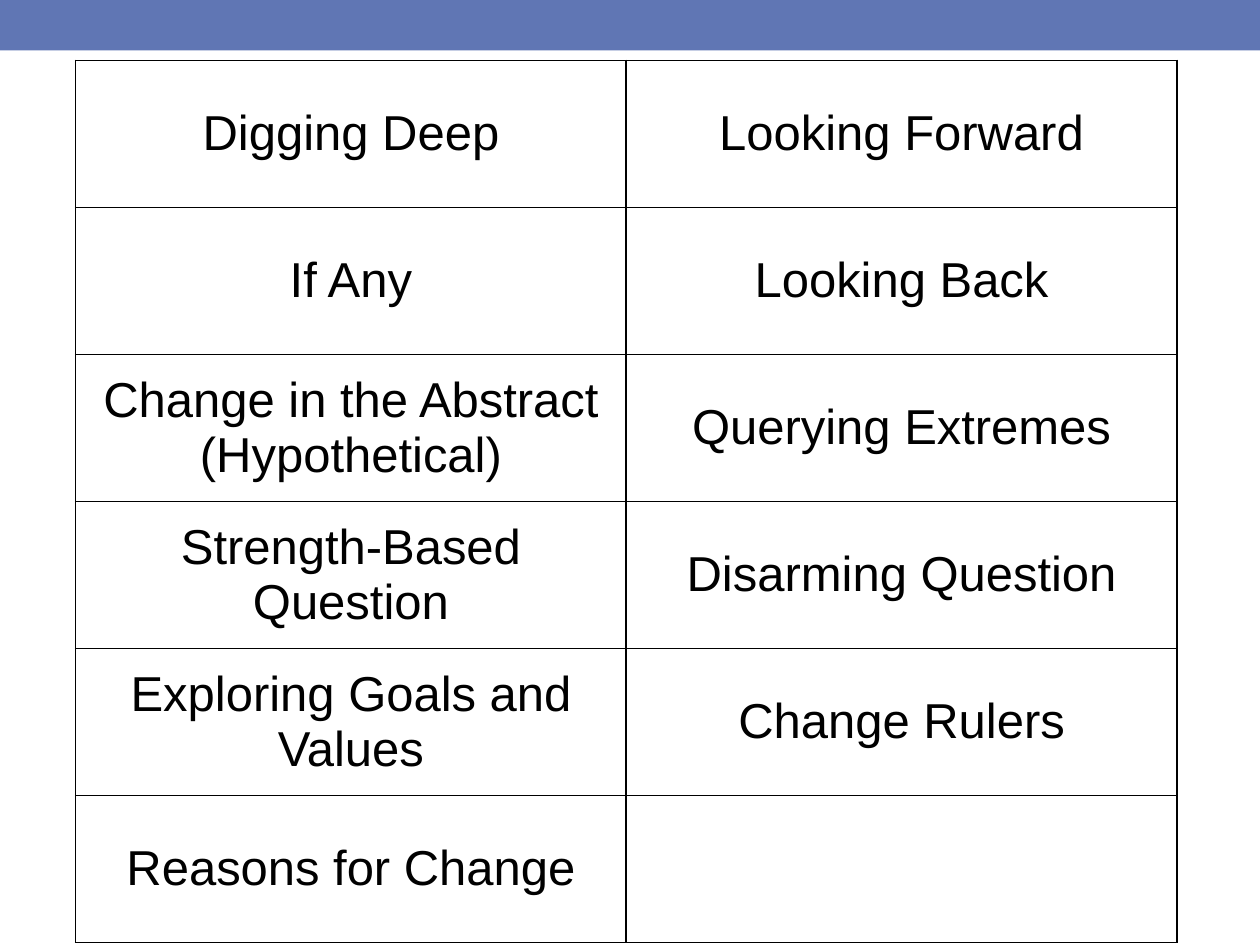
from pptx import Presentation
from pptx.dml.color import RGBColor as RGB
from pptx.enum.shapes import MSO_SHAPE as SHAPE
from pptx.enum.text import MSO_ANCHOR as ANCHOR, PP_ALIGN as ALIGN
from pptx.oxml.ns import qn
from pptx.util import Inches, Pt
from lxml.etree import SubElement as Sub

COLORS = {"bar": "6076B4", "ink": "000000", "page": "FFFFFF"}
FONT = {"name": "Arial", "size": Pt(28), "bold": False}
ROWS = [
    ("Digging Deep", "Looking Forward"),
    ("If Any", "Looking Back"),
    ("Change in the Abstract (Hypothetical)", "Querying Extremes"),
    ("Strength-Based Question", "Disarming Question"),
    ("Exploring Goals and Values", "Change Rulers"),
    ("Reasons for Change", ""),
]


def tint(name):
    return RGB.from_string(COLORS[name])


def add_bar(slide, width, height):
    bar = slide.shapes.add_shape(SHAPE.RECTANGLE, 0, 0, width, height)
    bar.shadow.inherit = False
    bar.fill.solid()
    bar.fill.fore_color.rgb = tint("bar")
    bar.line.fill.background()


def add_edges(cell):
    props = cell._tc.get_or_add_tcPr()
    for spot, side in enumerate(("lnL", "lnR", "lnT", "lnB")):
        line = props.makeelement(qn(f"a:{side}"), {"w": str(Pt(1))})
        props.insert(spot, line)
        fill = Sub(line, qn("a:solidFill"))
        Sub(fill, qn("a:srgbClr"), val=COLORS["ink"])


def fill_cell(cell, text):
    cell.fill.solid()
    cell.fill.fore_color.rgb = tint("page")
    cell.vertical_anchor = ANCHOR.MIDDLE
    add_edges(cell)
    para = cell.text_frame.paragraphs[0]
    para.alignment = ALIGN.CENTER
    font = para.font
    if text:
        run = para.add_run()
        run.text = text
        font = run.font
    for key, value in FONT.items():
        setattr(font, key, value)
    font.color.rgb = tint("ink")


def add_grid(slide, left, top, width, height):
    frame = slide.shapes.add_table(len(ROWS), 2, left, top, width, height)
    grid = frame.table
    grid.first_row = grid.horz_banding = False
    for r, row in enumerate(ROWS):
        for c, text in enumerate(row):
            fill_cell(grid.cell(r, c), text)


def main():
    deck = Presentation()
    deck.slide_width, deck.slide_height = Inches(10), Inches(7.5)
    slide = deck.slides.add_slide(deck.slide_layouts[6])
    add_bar(slide, deck.slide_width, Inches(0.4))
    add_grid(slide, Inches(0.6), Inches(0.48), Inches(8.74), Inches(7))
    deck.save("out.pptx")


if __name__ == "__main__":
    main()
